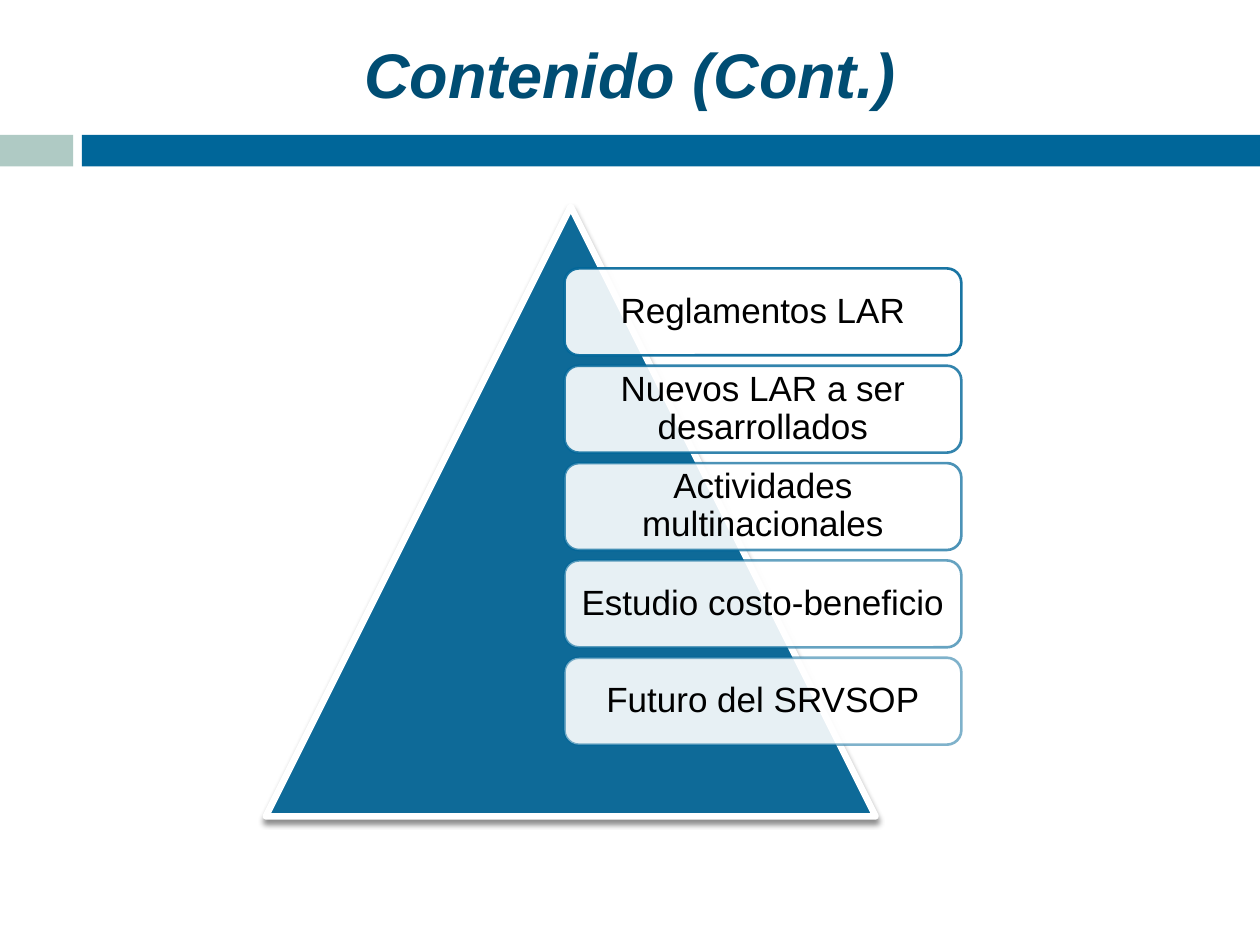
from dataclasses import dataclass

from lxml import etree
from pptx import Presentation
from pptx.dml.color import RGBColor
from pptx.enum.shapes import MSO_SHAPE
from pptx.enum.text import MSO_ANCHOR, PP_ALIGN
from pptx.oxml.ns import qn
from pptx.util import Inches, Pt

RECTANGLE = MSO_SHAPE.RECTANGLE
ROUNDED = MSO_SHAPE.ROUNDED_RECTANGLE
TRIANGLE = MSO_SHAPE.ISOSCELES_TRIANGLE
MIDDLE = MSO_ANCHOR.MIDDLE
CENTER = PP_ALIGN.CENTER


@dataclass(frozen=True)
class Theme:
    font: str = "Arial"
    blue: str = "006699"
    title_blue: str = "004D73"
    sage: str = "AFCAC4"
    white: str = "FFFFFF"
    black: str = "000000"
    title_size: int = 36
    topic_size: int = 20


THEME = Theme()
TOPICS = (
    "Reglamentos LAR",
    "Nuevos LAR a ser desarrollados",
    "Actividades multinacionales",
    "Estudio costo-beneficio",
    "Futuro del SRVSOP",
)
FIRST_TOP, LAST_TOP = 2.13, 5.22


def set_opacity(color_format_owner, percent):
    """Give the solid fill inside a shape's fill or line an alpha value."""
    color = color_format_owner.find(qn("a:solidFill"))[0]
    etree.SubElement(color, qn("a:alpha"), val=str(percent * 1000))


def add_block(slide, preset, box, fill, opacity=100):
    block = slide.shapes.add_shape(preset, *map(Inches, box))
    block.shadow.inherit = False
    block.fill.solid()
    block.fill.fore_color.rgb = RGBColor.from_string(fill)
    block.line.fill.background()
    if opacity < 100:
        set_opacity(block._element.spPr, opacity)
    return block


def outline(block, color, width, opacity=100):
    block.line.color.rgb = RGBColor.from_string(color)
    block.line.width = Pt(width)
    if opacity < 100:
        set_opacity(block._element.spPr.find(qn("a:ln")), opacity)


def drop_shadow(block):
    effects = block._element.spPr.find(qn("a:effectLst"))
    shadow = etree.SubElement(
        effects, qn("a:outerShdw"), blurRad=str(Pt(3)), dist=str(Pt(2.4)),
        dir="5400000", rotWithShape="0")
    color = etree.SubElement(shadow, qn("a:srgbClr"), val=THEME.black)
    etree.SubElement(color, qn("a:alpha"), val="45000")


def write_centered(shape, text, size, color, emphasis=False):
    frame = shape.text_frame
    frame.text = text
    frame.word_wrap = True
    frame.vertical_anchor = MIDDLE
    paragraph = frame.paragraphs[0]
    paragraph.alignment = CENTER
    font = paragraph.runs[0].font
    font.name = THEME.font
    font.size = Pt(size)
    font.bold = font.italic = emphasis
    font.color.rgb = RGBColor.from_string(color)


def add_header(slide):
    add_block(slide, RECTANGLE, (0, 1.07, 0.58, 0.25), THEME.sage)
    add_block(slide, RECTANGLE, (0.65, 1.07, 9.35, 0.25), THEME.blue)
    title = slide.shapes.add_textbox(*map(Inches, (0.54, 0.25, 8.92, 0.67)))
    write_centered(title, "Contenido (Cont.)", THEME.title_size,
                   THEME.title_blue, emphasis=True)


def add_pyramid(slide):
    pyramid = add_block(slide, TRIANGLE, (2.11, 1.64, 4.84, 4.84),
                        THEME.blue, opacity=90)
    outline(pyramid, THEME.white, 3.75)
    drop_shadow(pyramid)


def add_topic(slide, text, top, line_opacity):
    topic = add_block(slide, ROUNDED, (4.48, top, 3.15, 0.69),
                      THEME.white, opacity=90)
    outline(topic, THEME.blue, 1.5, line_opacity)
    write_centered(topic, text, THEME.topic_size, THEME.black)
    frame = topic.text_frame
    frame.margin_left = frame.margin_right = Inches(0.05)
    frame.margin_top = frame.margin_bottom = Inches(0.05)
    frame.paragraphs[0].line_spacing = 0.9


def main():
    deck = Presentation()
    deck.slide_width, deck.slide_height = Inches(10), Inches(7.5)
    slide = deck.slides.add_slide(deck.slide_layouts[6])
    add_header(slide)
    add_pyramid(slide)
    pitch = (LAST_TOP - FIRST_TOP) / (len(TOPICS) - 1)
    for index, text in enumerate(TOPICS):
        add_topic(slide, text, FIRST_TOP + index * pitch, 90 - 10 * index)
    deck.save("out.pptx")


if __name__ == "__main__":
    main()
